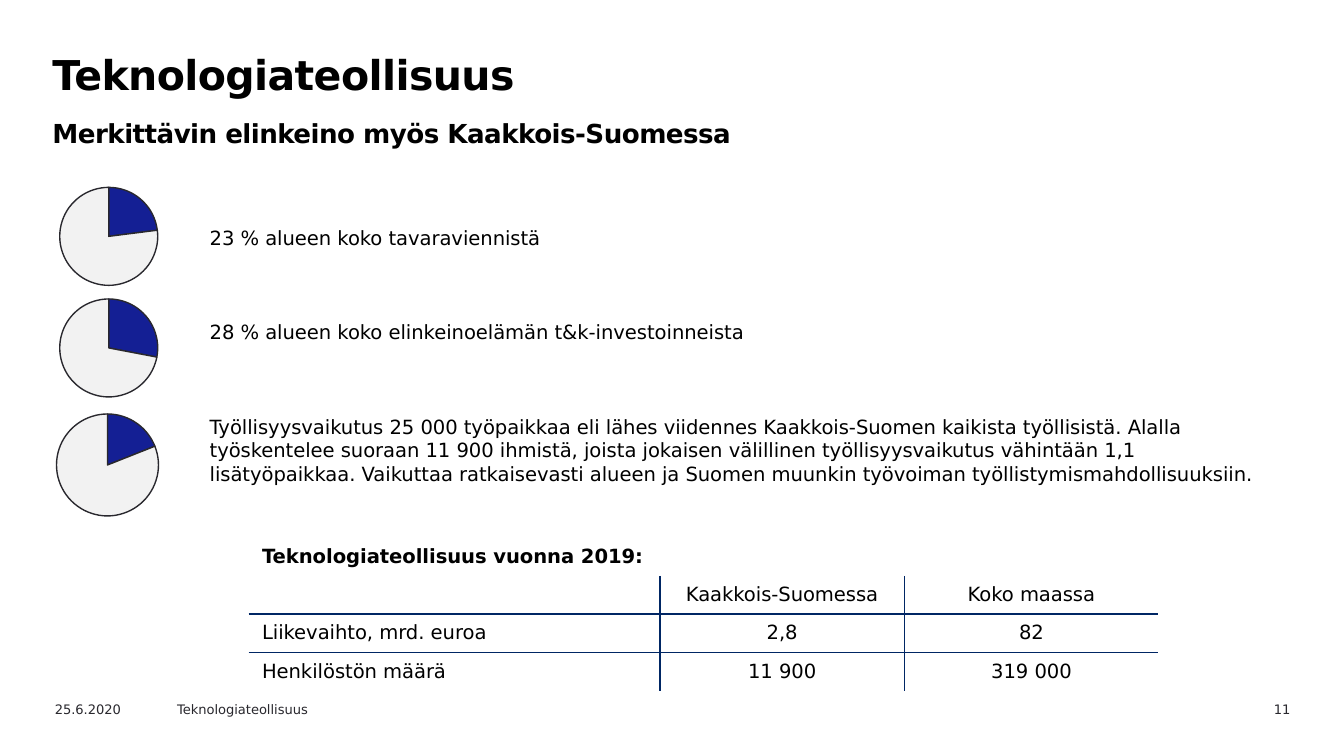
from lxml import etree
from pptx import Presentation
from pptx.chart.data import CategoryChartData
from pptx.dml.color import RGBColor
from pptx.enum.chart import XL_CHART_TYPE
from pptx.enum.text import MSO_ANCHOR, MSO_AUTO_SIZE, PP_ALIGN
from pptx.oxml import parse_xml
from pptx.oxml.ns import nsdecls, qn
from pptx.util import Inches, Pt

PIE = XL_CHART_TYPE.PIE
LEFT, CENTER, RIGHT = PP_ALIGN.LEFT, PP_ALIGN.CENTER, PP_ALIGN.RIGHT
TOP, MIDDLE = MSO_ANCHOR.TOP, MSO_ANCHOR.MIDDLE

SLIDE_WIDTH = 10
SLIDE_HEIGHT = SLIDE_WIDTH * 9 / 16
FONT = "DejaVu Sans"
BLACK, GRAPHITE, NAVY = "000000", "29282E", "002664"
SHARE_COLORS = ["141F94", "F2F2F2"]
BODY_SIZE = 10.5

HEADING = "Teknologiateollisuus"
SUBHEADING = "Merkittävin elinkeino myös Kaakkois-Suomessa"
STATEMENTS = [
    "23 % alueen koko tavaraviennistä",
    "28 % alueen koko elinkeinoelämän t&k-investoinneista",
    "Työllisyysvaikutus 25 000 työpaikkaa eli lähes viidennes Kaakkois-Suomen "
    "kaikista työllisistä. Alalla työskentelee suoraan 11 900 ihmistä, joista "
    "jokaisen välillinen työllisyysvaikutus vähintään 1,1 lisätyöpaikkaa. "
    "Vaikuttaa ratkaisevasti alueen ja Suomen muunkin työvoiman "
    "työllistymismahdollisuuksiin.",
]
# share in percent, left, top, side
PIES = [(23, 0.31, 1.26, 1), (28, 0.31, 2.09, 1), (19, 0.28, 2.94, 1.04)]
PIE_SHARE_OF_FRAME = 0.73
TABLE_ROWS = [
    ["Teknologiateollisuus vuonna 2019:", "", ""],
    ["", "Kaakkois-Suomessa", "Koko maassa"],
    ["Liikevaihto, mrd. euroa", "2,8", "82"],
    ["Henkilöstön määrä", "11 900", "319 000"],
]
COLUMN_WIDTHS = [3.06, 1.82, 1.89]
TABLE_HEIGHT = 1.14
# text, left, width, alignment
FOOTERS = [
    ("25.6.2020", 0.31, 1, LEFT),
    (HEADING, 1.22, 1.42, LEFT),
    ("11", 8.76, 0.94, RIGHT),
]


def color(value):
    return RGBColor.from_string(value)


def format_font(font, size, value, bold=False):
    font.name, font.size, font.bold = FONT, Pt(size), bold
    font.color.rgb = color(value)


def place(shape, left, top, width, height):
    shape.left, shape.top = Inches(left), Inches(top)
    shape.width, shape.height = Inches(width), Inches(height)
    frame = shape.text_frame
    frame.word_wrap = True
    frame.auto_size = MSO_AUTO_SIZE.NONE
    frame.vertical_anchor = TOP
    return frame


def add_heading(slide):
    frame = place(slide.shapes.title, 0.29, 0.31, 8.74, 0.71)
    frame.margin_top = Inches(0.05)
    frame.margin_bottom = 0
    frame.text = HEADING + "\v" + SUBHEADING
    paragraph = frame.paragraphs[0]
    paragraph.alignment = LEFT
    paragraph.line_spacing = Pt(27)
    for run, size in zip(paragraph.runs, (22, 14)):
        format_font(run.font, size, BLACK, bold=True)
        run._r.get_or_add_rPr().set("spc", "-30")


def add_statements(slide):
    frame = place(slide.placeholders[1], 1.46, 1.63, 8.19, 2.42)
    frame.text = "\n".join(STATEMENTS)
    for index, paragraph in enumerate(frame.paragraphs):
        properties = paragraph._p.get_or_add_pPr()
        properties.set("marL", "0")
        properties.set("indent", "0")
        etree.SubElement(properties, qn("a:buNone"))
        paragraph.alignment = LEFT
        paragraph.space_before = Pt(38 if index else 0)
        format_font(paragraph.runs[0].font, BODY_SIZE, BLACK)


def add_pie(slide, share, left, top, side):
    data = CategoryChartData()
    data.categories = ["1", "2"]
    data.add_series("Series 1", [share, 100 - share])
    chart = slide.shapes.add_chart(
        PIE, Inches(left), Inches(top), Inches(side), Inches(side), data).chart
    chart.has_title = chart.has_legend = False
    format_font(chart.font, 18, GRAPHITE)
    plot = chart.plots[0]
    plot.vary_by_categories = True
    for index, value in enumerate(SHARE_COLORS):
        point = plot.series[0].points[index].format
        point.fill.solid()
        point.fill.fore_color.rgb = color(value)
        point.line.color.rgb = color(GRAPHITE)
        point.line.width = Pt(0.75)
    set_plot_size(chart)


def set_plot_size(chart):
    """Center the pie in its frame at a fixed share of the frame."""
    plot_area = chart._chartSpace.chart.plotArea
    for old in plot_area.findall(qn("c:layout")):
        plot_area.remove(old)
    offset = (1 - PIE_SHARE_OF_FRAME) / 2
    settings = [("layoutTarget", "inner"), ("xMode", "edge"), ("yMode", "edge"),
                ("x", offset), ("y", offset),
                ("w", PIE_SHARE_OF_FRAME), ("h", PIE_SHARE_OF_FRAME)]
    layout = etree.Element(qn("c:layout"))
    manual = etree.SubElement(layout, qn("c:manualLayout"))
    for tag, value in settings:
        etree.SubElement(manual, qn("c:" + tag)).set("val", str(value))
    plot_area.insert(0, layout)


def set_borders(cell, sides):
    """Draw the named sides (L, R, T, B) and clear the others."""
    properties = cell._tc.get_or_add_tcPr()
    for side in "LRTB":
        fill = "<a:noFill/>"
        if side in sides:
            fill = f'<a:solidFill><a:srgbClr val="{NAVY}"/></a:solidFill>'
        properties.append(parse_xml(
            f'<a:ln{side} {nsdecls("a")} w="{Pt(1)}">{fill}</a:ln{side}>'))


def inner_sides(row, column):
    """Sides of a grid cell that it shares with a neighbour below the caption."""
    if row == 0:
        return ""
    tests = {"L": column > 0, "R": column < len(COLUMN_WIDTHS) - 1,
             "T": row > 1, "B": row < len(TABLE_ROWS) - 1}
    return "".join(side for side, shared in tests.items() if shared)


def add_figures_table(slide):
    table = slide.shapes.add_table(
        len(TABLE_ROWS), len(COLUMN_WIDTHS), Inches(1.85), Inches(4),
        Inches(sum(COLUMN_WIDTHS)), Inches(TABLE_HEIGHT)).table
    table.first_row = table.horz_banding = False
    for column, width in zip(table.columns, COLUMN_WIDTHS):
        column.width = Inches(width)
    for row_index, texts in enumerate(TABLE_ROWS):
        for column_index, text in enumerate(texts):
            cell = table.cell(row_index, column_index)
            set_borders(cell, inner_sides(row_index, column_index))
            cell.fill.background()
            cell.vertical_anchor = MIDDLE
            paragraph = cell.text_frame.paragraphs[0]
            paragraph.alignment = CENTER if column_index else LEFT
            if text:
                paragraph.text = text
                format_font(paragraph.runs[0].font, BODY_SIZE, BLACK, row_index == 0)
            else:
                end = etree.SubElement(paragraph._p, qn("a:endParaRPr"))
                end.set("sz", str(int(BODY_SIZE * 100)))
    table.cell(0, 0).merge(table.cell(0, len(COLUMN_WIDTHS) - 1))


def add_footer(slide, text, left, width, alignment):
    frame = place(slide.shapes.add_textbox(0, 0, 0, 0), left, 5.17, width, 0.18)
    frame.text = text
    paragraph = frame.paragraphs[0]
    paragraph.alignment = alignment
    format_font(paragraph.runs[0].font, 7, GRAPHITE)


def main():
    presentation = Presentation()
    presentation.slide_width = Inches(SLIDE_WIDTH)
    presentation.slide_height = Inches(SLIDE_HEIGHT)
    slide = presentation.slides.add_slide(presentation.slide_layouts[1])
    add_heading(slide)
    add_statements(slide)
    for pie in PIES:
        add_pie(slide, *pie)
    add_figures_table(slide)
    for footer in FOOTERS:
        add_footer(slide, *footer)
    presentation.save("out.pptx")


if __name__ == "__main__":
    main()
